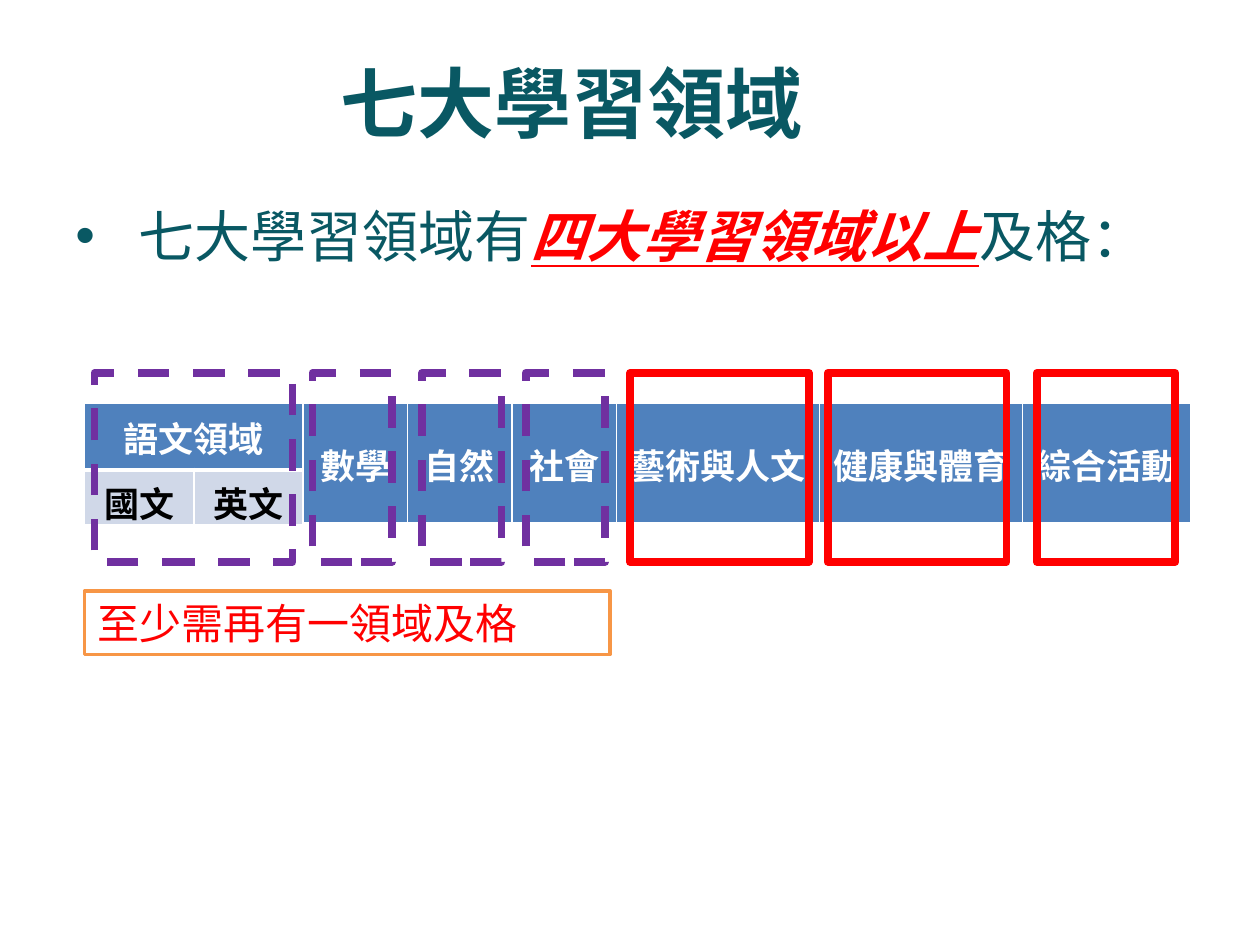
from lxml import etree
from pptx import Presentation
from pptx.dml.color import RGBColor
from pptx.enum import dml, shapes, text
from pptx.oxml import ns
from pptx.util import Pt

COLORS = {
    "teal": "095863", "red": "FF0000", "purple": "7030A0", "orange": "F79646",
    "header": "4F81BD", "band": "D0D8E8", "white": "FFFFFF", "black": "000000",
}
FONT = "Calibri"
SUBJECTS = ["數學", "自然", "社會", "藝術與人文", "健康與體育", "綜合活動"]
LANGUAGES = ["國文", "英文"]


def rgb(name):
    """Return the palette colour with the given name."""
    return RGBColor.from_string(COLORS[name])


def add_run(paragraph, wording, size, color, bold=False, emphasis=False):
    """Append one formatted run to a paragraph."""
    run = paragraph.add_run()
    run.text = wording
    font = run.font
    font.name, font.size, font.bold = FONT, Pt(size), bold
    font.italic = font.underline = emphasis
    font.color.rgb = rgb(color)


def add_text_box(slide, box, anchor):
    """Add a wrapping text box and return its first paragraph."""
    frame = slide.shapes.add_textbox(*map(Pt, box)).text_frame
    frame.word_wrap = True
    frame.vertical_anchor = anchor
    return frame.paragraphs[0]


def add_title(slide, box):
    """Add the centred slide title."""
    heading = add_text_box(slide, box, text.MSO_ANCHOR.MIDDLE)
    heading.alignment = text.PP_ALIGN.CENTER
    add_run(heading, "七大學習領域", 44, "teal", bold=True)


def add_requirement(slide, box):
    """Add the bulleted passing requirement."""
    requirement = add_text_box(slide, box, text.MSO_ANCHOR.TOP)
    properties = requirement._p.get_or_add_pPr()
    properties.set("marL", str(Pt(36)))
    properties.set("indent", str(-Pt(36)))
    etree.SubElement(properties, ns.qn("a:buFont"), typeface="Arial")
    etree.SubElement(properties, ns.qn("a:buChar"), char="•")
    add_run(requirement, "七大學習領域有", 32, "teal")
    add_run(requirement, "四大學習領域以上", 32, "red", bold=True, emphasis=True)
    add_run(requirement, "及格：", 32, "teal")


def set_borders(cell, bottom):
    """Give a cell white borders with the given bottom width."""
    properties = cell._tc.get_or_add_tcPr()
    widths = {"lnL": 1, "lnR": 1, "lnT": 1, "lnB": bottom}
    for position, (side, width) in enumerate(widths.items()):
        border = etree.Element(ns.qn(f"a:{side}"), w=str(Pt(width)))
        fill = etree.SubElement(border, ns.qn("a:solidFill"))
        etree.SubElement(fill, ns.qn("a:srgbClr"), val=COLORS["white"])
        properties.insert(position, border)


def fill_cell(cell, wording, fill, color):
    """Write a centred bold label into a filled cell."""
    cell.fill.solid()
    cell.fill.fore_color.rgb = rgb(fill)
    cell.vertical_anchor = text.MSO_ANCHOR.MIDDLE
    label = cell.text_frame.paragraphs[0]
    label.alignment = text.PP_ALIGN.CENTER
    add_run(label, wording, 20, color, bold=True)


def add_subject_table(slide, box):
    """Add the table of the seven learning areas."""
    table = slide.shapes.add_table(2, 8, *map(Pt, box)).table
    for column, width in zip(table.columns, [62.4] * 2 + [59.7] * 3 + [116.1] * 2 + [96.2]):
        column.width = Pt(width)
    for row, height in zip(table.rows, [38, 29.2]):
        row.height = Pt(height)
    for index in range(8):
        set_borders(table.cell(0, index), 3)
        set_borders(table.cell(1, index), 1)
    table.cell(0, 0).merge(table.cell(0, 1))
    fill_cell(table.cell(0, 0), "語文領域", "header", "white")
    for index, language in enumerate(LANGUAGES):
        fill_cell(table.cell(1, index), language, "band", "black")
    for index, subject in enumerate(SUBJECTS, start=2):
        table.cell(0, index).merge(table.cell(1, index))
        fill_cell(table.cell(0, index), subject, "header", "white")


def add_rectangle(slide, box, color, width):
    """Add an unfilled rectangle with a coloured outline."""
    rectangle = slide.shapes.add_shape(shapes.MSO_SHAPE.RECTANGLE, *map(Pt, box))
    rectangle.shadow.inherit = False
    rectangle.fill.background()
    rectangle.line.color.rgb = rgb(color)
    rectangle.line.width = Pt(width)
    return rectangle


def add_subject_frames(slide, box):
    """Outline the areas, solid for the last three and dashed for the rest."""
    left, top, _, height = box
    for offset, width in [(538.5, 79.2), (419, 102.2), (306, 102.2)]:
        add_rectangle(slide, (left + offset, top, width, height), "red", 4.5)
    for offset, width in [(0, 113.2), (124.6, 45.4), (187.2, 45.4), (246.4, 45.4)]:
        frame = add_rectangle(slide, (left + offset, top, width, height), "purple", 4.5)
        frame.line.dash_style = dml.MSO_LINE.DASH


def add_note(slide, box):
    """Add the boxed note below the dashed areas."""
    note = add_rectangle(slide, box, "orange", 2)
    note.fill.solid()
    note.fill.fore_color.rgb = rgb("white")
    frame = note.text_frame
    frame.word_wrap = True
    frame.auto_size = text.MSO_AUTO_SIZE.SHAPE_TO_FIT_TEXT
    frame.vertical_anchor = text.MSO_ANCHOR.TOP
    paragraph = frame.paragraphs[0]
    paragraph.alignment = text.PP_ALIGN.JUSTIFY
    add_run(paragraph, "至少需再有一領域及格", 24, "red")


def main():
    """Build and save the slide."""
    deck = Presentation()
    deck.slide_width, deck.slide_height = Pt(720), Pt(540)
    slide = deck.slides.add_slide(deck.slide_layouts[6])
    add_title(slide, (36.7, 13, 580.3, 90))
    add_requirement(slide, (36, 111.6, 648, 385.2))
    add_subject_table(slide, (48.4, 230.6, 632.3, 67.2))
    add_subject_frames(slide, (54, 213.1, 617.7, 108))
    add_note(slide, (48.4, 337.7, 300.2, 36.3))
    deck.save("out.pptx")


if __name__ == "__main__":
    main()
